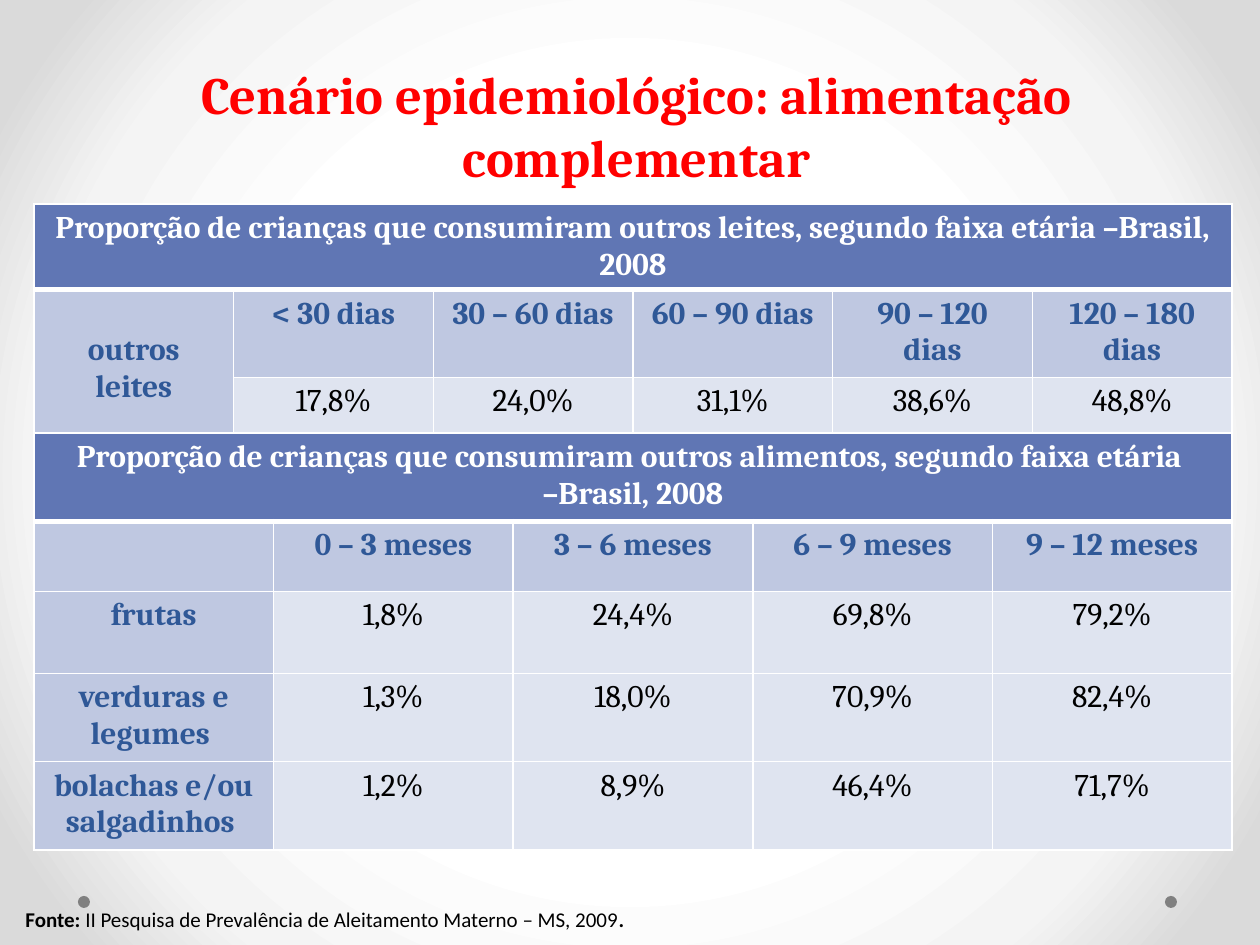
from pptx import Presentation
from pptx.dml.color import RGBColor
from pptx.enum.shapes import MSO_SHAPE
from pptx.enum.text import MSO_AUTO_SIZE, PP_ALIGN
from pptx.oxml import parse_xml
from pptx.oxml.ns import nsdecls
from pptx.util import Emu, Pt

RED, WHITE, BLACK, GREY = "FF0000", "FFFFFF", "000000", "808080"
NAVY, HEADER, LABEL, VALUE = "2F5897", "6076B4", "BFC8E1", "DFE4F0"

HEADER_FORMAT = {"name": "Cambria", "size": Pt(18), "bold": True, "color": WHITE}
LABEL_FORMAT = {**HEADER_FORMAT, "color": NAVY}
VALUE_FORMAT = {**HEADER_FORMAT, "bold": False, "color": BLACK}
TITLE_FORMAT = {**HEADER_FORMAT, "size": Pt(30), "color": RED}
SOURCE_FORMAT = {"name": "Calibri", "size": Pt(12), "bold": False, "color": BLACK}

MILK_ROWS = [
    ["Proporção de crianças que consumiram outros leites, segundo faixa etária –Brasil, 2008"],
    ["outros leites", "< 30 dias", "30 – 60 dias", "60 – 90 dias", "90 – 120 dias", "120 – 180 dias"],
    ["", "17,8%", "24,0%", "31,1%", "38,6%", "48,8%"],
]
FOOD_ROWS = [
    ["Proporção de crianças que consumiram outros alimentos, segundo faixa etária \n–Brasil, 2008"],
    ["", "0 – 3 meses", "3 – 6 meses", "6 – 9 meses", "9 – 12 meses"],
    ["frutas", "1,8%", "24,4%", "69,8%", "79,2%"],
    ["verduras e legumes ", "1,3%", "18,0%", "70,9%", "82,4%"],
    ["bolachas e/ou salgadinhos ", "1,2%", "8,9%", "46,4%", "71,7%"],
]


def px(value):
    return Emu(round(value * 914400 / 126))


def rgb(code):
    return RGBColor.from_string(code)


def add_span(para, text, style):
    span = para.add_run()
    span.text = text
    for key, value in style.items():
        if key == "color":
            span.font.color.rgb = rgb(value)
        else:
            setattr(span.font, key, value)
    return span


def paint_background(page):
    stops = "".join(
        f'<a:gs pos="{position * 1000}"><a:srgbClr val="{color}"/></a:gs>'
        for position, color in [(50, WHITE), (76, "F4F4F4"), (92, "DADADA")])
    page.background.fill.solid()
    properties = page.background.fill._xPr
    properties.replace(properties[0], parse_xml(
        f'<a:gradFill {nsdecls("a")} rotWithShape="1"><a:gsLst>{stops}</a:gsLst>'
        '<a:path path="circle"><a:fillToRect l="50000" t="50000" r="50000" b="50000"/>'
        '</a:path></a:gradFill>'))


def add_dot(page, left, top, size):
    dot = page.shapes.add_shape(MSO_SHAPE.OVAL, px(left), px(top), px(size), px(size))
    dot.shadow.inherit = False
    dot.fill.solid()
    dot.fill.fore_color.rgb = rgb(GREY)
    dot.line.fill.background()


def add_text_box(page, box):
    """Add a wrapping text box and return its first paragraph."""
    frame = page.shapes.add_textbox(*map(px, box)).text_frame
    frame.word_wrap = True
    frame.auto_size = MSO_AUTO_SIZE.SHAPE_TO_FIT_TEXT
    return frame.paragraphs[0]


def add_title(page, box):
    para = add_text_box(page, box)
    para.alignment = PP_ALIGN.CENTER
    span = add_span(para, "Cenário epidemiológico: alimentação complementar", TITLE_FORMAT)
    span.font._element.insert(1, parse_xml(
        f'<a:effectLst {nsdecls("a")}><a:outerShdw blurRad="38100" dist="38100" dir="2700000">'
        '<a:srgbClr val="000000"><a:alpha val="43000"/></a:srgbClr></a:outerShdw></a:effectLst>'))


def add_source(page, box):
    para = add_text_box(page, box)
    bold = {**SOURCE_FORMAT, "bold": True}
    add_span(para, "Fonte: ", bold)
    add_span(para, "II Pesquisa de Prevalência de Aleitamento Materno – MS, 2009", SOURCE_FORMAT)
    add_span(para, ".", bold)


def set_borders(cell, bottom):
    """Draw white borders, 1 pt wide except for the bottom one."""
    properties = cell._tc.get_or_add_tcPr()
    for index, (side, width) in enumerate([("L", 1), ("R", 1), ("T", 1), ("B", bottom)]):
        properties.insert(index, parse_xml(
            f'<a:ln{side} {nsdecls("a")} w="{Pt(width)}"><a:solidFill>'
            f'<a:srgbClr val="{WHITE}"/></a:solidFill></a:ln{side}>'))


def fill_cell(cell, text, fill, style, bottom=1):
    cell.fill.solid()
    cell.fill.fore_color.rgb = rgb(fill)
    set_borders(cell, bottom)
    for index, line in enumerate(text.split("\n") if text else []):
        frame = cell.text_frame
        para = frame.add_paragraph() if index else frame.paragraphs[0]
        para.alignment = PP_ALIGN.CENTER
        add_span(para, line, style)


def add_rate_table(page, box, rows, heights):
    """Add a table with a merged header, a row of ages and a column of labels."""
    columns = len(rows[1])
    table = page.shapes.add_table(len(rows), columns, *map(px, box)).table
    for column in table.columns:
        column.width = px(box[2] / columns)
    for row, height in zip(table.rows, heights):
        row.height = px(height)
    table.cell(0, 0).merge(table.cell(0, columns - 1))
    for r, texts in enumerate(rows):
        for c in range(columns):
            text = texts[c] if c < len(texts) else ""
            if r == 0:
                look = HEADER, HEADER_FORMAT, 3
            elif r == 1 or c == 0:
                look = LABEL, LABEL_FORMAT
            else:
                look = VALUE, VALUE_FORMAT
            fill_cell(table.cell(r, c), text, *look)
    return table


def build_slide(page):
    paint_background(page)
    for left in (78, 1165):
        add_dot(page, left, 896, 12)
    milk = add_rate_table(page, (34, 204, 1198, 252), MILK_ROWS, [82, 88, 68])
    milk.cell(1, 0).merge(milk.cell(2, 0))
    milk.cell(1, 0).margin_top = px(43)
    add_source(page, (13, 900, 727, 38))
    add_title(page, (41, 56, 1191, 140))
    add_rate_table(page, (34, 433, 1198, 417), FOOD_ROWS, [88, 70, 82, 88, 88])


def main():
    deck = Presentation()
    deck.slide_width, deck.slide_height = px(1260), px(945)
    build_slide(deck.slides.add_slide(deck.slide_layouts[6]))
    deck.save("out.pptx")


if __name__ == "__main__":
    main()
